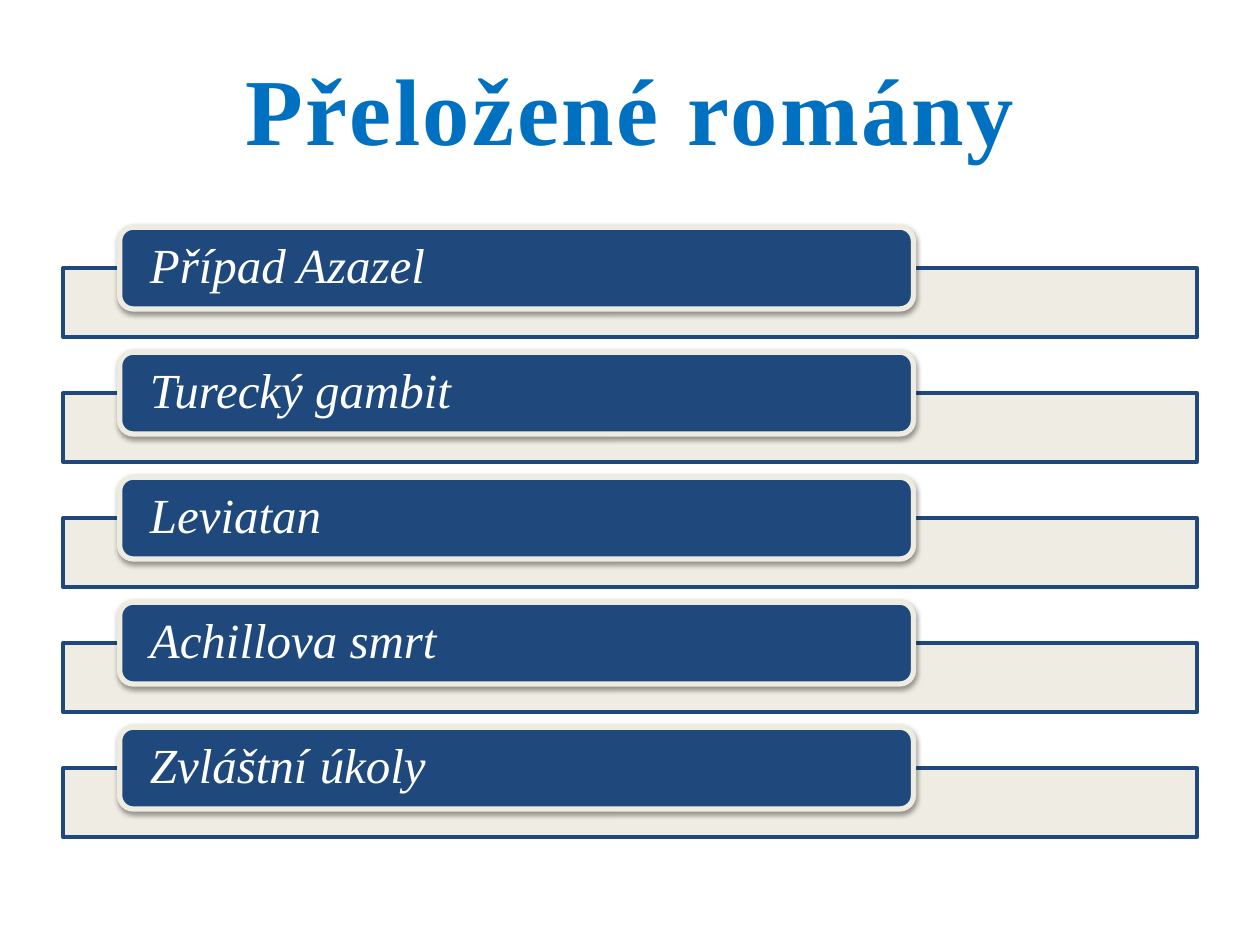
from dataclasses import dataclass

from pptx import Presentation
from pptx.dml.color import RGBColor
from pptx.enum.shapes import MSO_SHAPE
from pptx.enum.text import MSO_ANCHOR, PP_ALIGN
from pptx.oxml import parse_xml
from pptx.oxml.ns import nsdecls
from pptx.util import Cm, Pt

RECTANGLE = MSO_SHAPE.RECTANGLE
ROUNDED = MSO_SHAPE.ROUNDED_RECTANGLE
LEFT, CENTER = PP_ALIGN.LEFT, PP_ALIGN.CENTER
TOP, MIDDLE = MSO_ANCHOR.TOP, MSO_ANCHOR.MIDDLE


@dataclass(frozen=True)
class Theme:
    font: str = "Times New Roman"
    title_color: RGBColor = RGBColor(0x00, 0x70, 0xC0)
    navy: RGBColor = RGBColor(0x1F, 0x49, 0x7D)
    cream: RGBColor = RGBColor(0xEE, 0xEC, 0xE1)
    white: RGBColor = RGBColor(0xFF, 0xFF, 0xFF)
    title_size: int = 54
    label_size: int = 28


THEME = Theme()
TITLE = "Přeložené romány"
NOVELS = ["Případ Azazel", "Turecký gambit", "Leviatan", "Achillova smrt", "Zvláštní úkoly"]


def write_text(shape, text, frame_format, paragraph_format, font_format, color):
    """Write one formatted line into a shape."""
    frame = shape.text_frame
    paragraph = frame.paragraphs[0]
    run = paragraph.add_run()
    run.text = text
    run.font.color.rgb = color
    for target, values in (
        (frame, {"word_wrap": True, **frame_format}),
        (paragraph, paragraph_format),
        (run.font, {"name": THEME.font, **font_format}),
    ):
        for name, value in values.items():
            setattr(target, name, value)
    return run


def add_block(shapes, kind, box, fill, line, line_width):
    shape = shapes.add_shape(kind, *box)
    shape.shadow.inherit = False
    shape.fill.solid()
    shape.fill.fore_color.rgb = fill
    shape.line.color.rgb = line
    shape.line.width = Pt(line_width)
    return shape


def set_opacity(shape, percent):
    color = shape.fill._xPr.find(".//{*}srgbClr")
    color.append(parse_xml(f'<a:alpha {nsdecls("a")} val="{percent * 1000}"/>'))


def add_soft_shadow(shape):
    effects = shape._element.spPr.find("{*}effectLst")
    effects.append(parse_xml(
        f'<a:outerShdw {nsdecls("a")} blurRad="{Pt(3.1)}" dist="{Pt(1.6)}" dir="5400000" '
        'rotWithShape="0"><a:srgbClr val="000000"><a:alpha val="38000"/></a:srgbClr>'
        '</a:outerShdw>'))


def add_title(slide, left, top, width, height):
    title = slide.shapes.add_textbox(left, top, width, height)
    run = write_text(
        title, TITLE, {"vertical_anchor": TOP}, {"alignment": CENTER},
        {"size": Pt(THEME.title_size), "bold": True}, THEME.title_color)
    run.font._element.set("spc", "150")


def add_novel(shapes, text, left, top, width):
    """Pale bar with a rounded label overlapping its top edge."""
    bar = add_block(shapes, RECTANGLE, (left, top + Cm(0.82), width, Cm(1.4)),
                    THEME.cream, THEME.navy, 2)
    set_opacity(bar, 90)

    label_box = (left + int(width * 0.05), top, int(width * 0.7), Cm(1.65))
    label = add_block(shapes, ROUNDED, label_box, THEME.navy, THEME.cream, 3)
    add_soft_shadow(label)
    write_text(
        label, text,
        {"vertical_anchor": MIDDLE, "margin_left": Cm(0.53), "margin_right": Cm(0.53),
         "margin_top": 0, "margin_bottom": 0},
        {"alignment": LEFT, "line_spacing": 0.9},
        {"size": Pt(THEME.label_size), "italic": True}, THEME.white)


def add_novel_list(slide, left, top, width, pitch):
    group = slide.shapes.add_group_shape()
    for index, novel in enumerate(NOVELS):
        add_novel(group.shapes, novel, left, top + index * pitch, width)


def main():
    presentation = Presentation()
    presentation.slide_width, presentation.slide_height = Cm(25.4), Cm(19.05)
    slide = presentation.slides.add_slide(presentation.slide_layouts[6])

    # Novels, then the heading
    add_novel_list(slide, Cm(1.27), Cm(4.58), Cm(22.86), Cm(2.52))
    add_title(slide, Cm(1.9), Cm(0.91), Cm(21.6), Cm(2.57))

    presentation.save("out.pptx")


if __name__ == "__main__":
    main()
